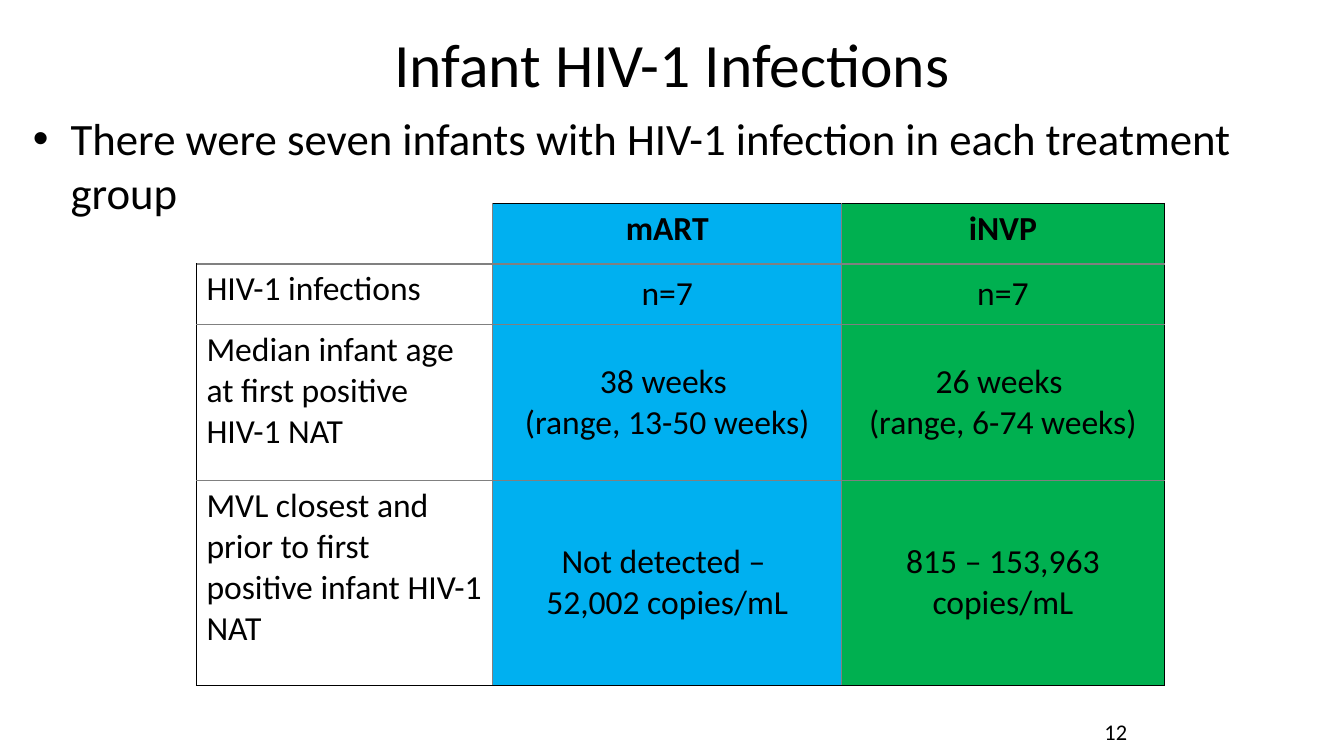
import pptx
import pptx.dml.color
import pptx.enum.text
import pptx.oxml
import pptx.oxml.ns
import pptx.util
from pptx.util import Cm

BLACK = pptx.dml.color.RGBColor(0x00, 0x00, 0x00)
GRAY = pptx.dml.color.RGBColor(0x80, 0x80, 0x80)
BLUE = pptx.dml.color.RGBColor(0x00, 0xB0, 0xF0)
GREEN = pptx.dml.color.RGBColor(0x00, 0xB0, 0x50)
COLUMN_FILLS = [None, BLUE, GREEN]
COLUMN_WIDTHS = [7.47, 8.79, 8.13]
ROW_HEIGHTS = [1.52, 1.52, 3.94, 5.16]
ROWS = [
    ["", "mART", "iNVP"],
    ["HIV-1 infections", "n=7", "n=7"],
    ["Median infant age at first positive HIV-1 NAT",
     "38 weeks \v(range, 13-50 weeks)", "26 weeks \v(range, 6-74 weeks)"],
    ["MVL closest and prior to first positive infant HIV-1 NAT",
     "Not detected – \v52,002 copies/mL", "815 – 153,963 copies/mL"],
]
ALIGN = pptx.enum.text.PP_ALIGN
ANCHOR = pptx.enum.text.MSO_ANCHOR
NAMESPACE = pptx.oxml.ns.nsdecls("a")


def format_paragraph(paragraph, size, align=ALIGN.LEFT, bold=False):
    paragraph.alignment = align
    font = paragraph.font
    font.name = "Calibri"
    font.size = pptx.util.Pt(size)
    font.bold = bold
    font.color.rgb = BLACK


def add_title(page, text):
    title = page.shapes.title
    title.left, title.top, title.width, title.height = Cm(1.7), Cm(0), Cm(30.48), Cm(3.18)
    title.text_frame.text = text
    title.text_frame.vertical_anchor = ANCHOR.MIDDLE
    format_paragraph(title.text_frame.paragraphs[0], 44, ALIGN.CENTER)


def add_text(page, text, left, top, width, height, size, align=ALIGN.LEFT,
             anchor=ANCHOR.TOP, bullet=False):
    frame = page.shapes.add_textbox(left, top, width, height).text_frame
    frame.word_wrap = True
    frame.vertical_anchor = anchor
    frame.text = text
    paragraph = frame.paragraphs[0]
    if bullet:
        properties = paragraph._p.get_or_add_pPr()
        properties.set("marL", str(Cm(0.95)))
        properties.set("indent", str(-Cm(0.95)))
        properties.append(pptx.oxml.parse_xml(f'<a:buFont {NAMESPACE} typeface="Arial"/>'))
        properties.append(pptx.oxml.parse_xml(f'<a:buChar {NAMESPACE} char="•"/>'))
    format_paragraph(paragraph, size, align)


def add_border(cell, side, color):
    paint = f'<a:solidFill><a:srgbClr val="{color}"/></a:solidFill>' if color else "<a:noFill/>"
    cell._tc.get_or_add_tcPr().append(pptx.oxml.parse_xml(
        f'<a:ln{side} {NAMESPACE} w="{pptx.util.Pt(1)}">{paint}</a:ln{side}>'))


def fill_cell(cell, color):
    if color is None:
        cell.fill.background()
        return
    cell.fill.solid()
    cell.fill.fore_color.rgb = color
    color_element = cell._tc.tcPr.find(".//" + pptx.oxml.ns.qn("a:srgbClr"))
    color_element.append(pptx.oxml.parse_xml(f'<a:alpha {NAMESPACE} val="50000"/>'))


def format_cell(cell, row, column):
    cell.text = ROWS[row][column]
    align = ALIGN.CENTER if column else ALIGN.LEFT
    cell.vertical_anchor = ANCHOR.MIDDLE if row and column else ANCHOR.TOP
    for paragraph in cell.text_frame.paragraphs:
        format_paragraph(paragraph, 24, align, bold=row == 0)
    outer_sides = {"L": column == 0, "R": column == len(COLUMN_WIDTHS) - 1,
                   "T": row == 0, "B": row == len(ROWS) - 1}
    for side, is_outer in outer_sides.items():
        outer_color = None if row == column == 0 else BLACK
        add_border(cell, side, outer_color if is_outer else GRAY)
    fill_cell(cell, COLUMN_FILLS[column])


def add_infection_table(page):
    table = page.shapes.add_table(
        len(ROWS), len(COLUMN_WIDTHS), Cm(4.95), Cm(5.13),
        Cm(sum(COLUMN_WIDTHS)), Cm(sum(ROW_HEIGHTS))).table
    table.first_row = False
    table.horz_banding = False
    for column, width in zip(table.columns, COLUMN_WIDTHS):
        column.width = Cm(width)
    for row_index, height in enumerate(ROW_HEIGHTS):
        table.rows[row_index].height = Cm(height)
        for column_index in range(len(COLUMN_WIDTHS)):
            format_cell(table.cell(row_index, column_index), row_index, column_index)


def main():
    deck = pptx.Presentation()
    deck.slide_width, deck.slide_height = Cm(33.87), Cm(19.05)
    page = deck.slides.add_slide(deck.slide_layouts.get_by_name("Title Only"))
    add_title(page, "Infant HIV-1 Infections")
    add_text(page, "12", Cm(26.85), Cm(17.93), Cm(2.54), Cm(1.02), 16,
             ALIGN.CENTER, ANCHOR.MIDDLE)
    add_infection_table(page)
    add_text(page, "There were seven infants with HIV-1 infection in each treatment group",
             Cm(0.58), Cm(2.67), Cm(31.6), Cm(3.15), 32, bullet=True)
    deck.save("out.pptx")


if __name__ == "__main__":
    main()
